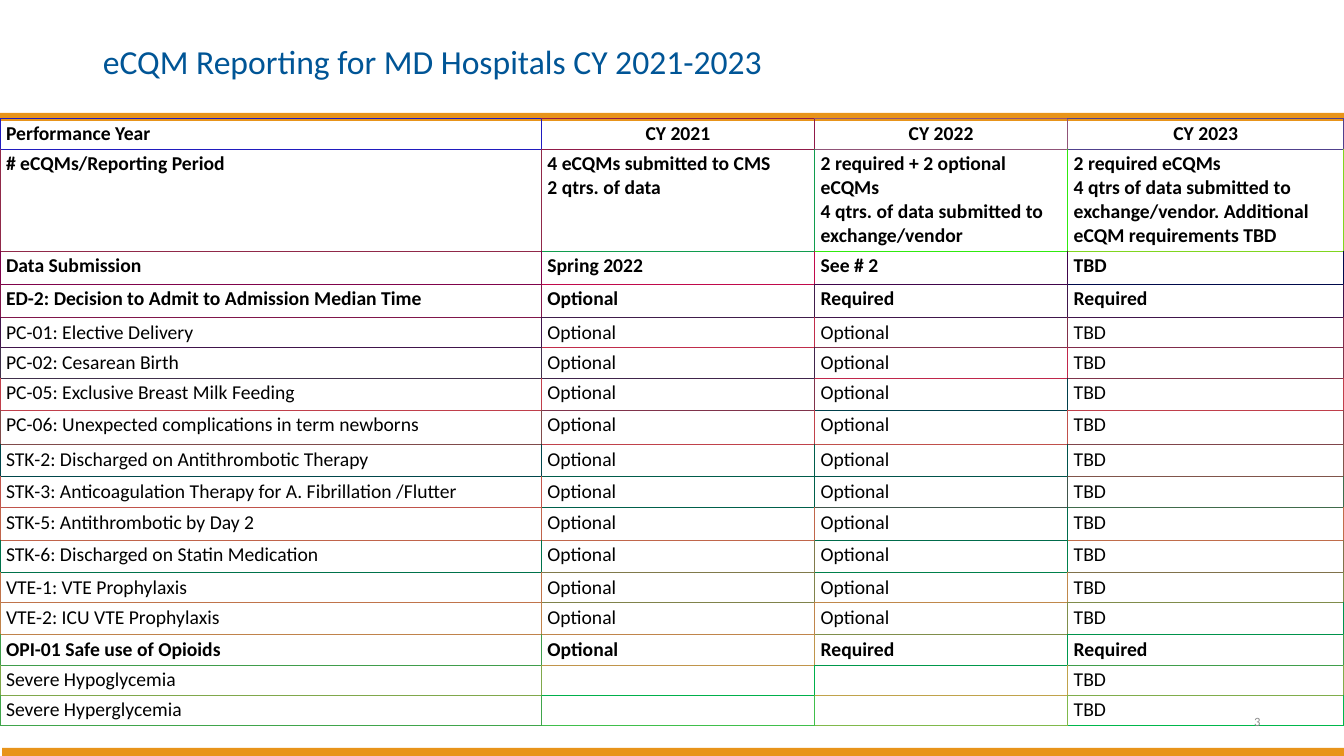
from lxml import etree
from pptx import Presentation
from pptx.dml.color import RGBColor
from pptx.enum.shapes import MSO_SHAPE
from pptx.enum.text import MSO_ANCHOR, PP_ALIGN
from pptx.oxml.ns import qn
from pptx.util import Inches, Pt

TITLE = "eCQM Reporting for MD Hospitals CY 2021-2023"
PAGE_NUMBER = "3"
OPTIONAL = ("Optional", "Optional", "TBD")
REQUIRED = ("Optional", "Required", "Required")
UNDECIDED = ("", "", "TBD")

ROWS = [
    ("Performance Year", "CY 2021", "CY 2022", "CY 2023"),
    (
        "# eCQMs/Reporting Period",
        "4 eCQMs submitted to CMS\n2 qtrs. of data",
        "2 required + 2 optional\neCQMs\n4 qtrs. of data submitted to exchange/vendor",
        "2 required eCQMs\n4 qtrs of data submitted to exchange/vendor. "
        "Additional eCQM requirements TBD",
    ),
    ("Data Submission", "Spring 2022", "See # 2", "TBD"),
    ("ED-2: Decision to Admit to Admission Median Time", *REQUIRED),
    ("PC-01: Elective Delivery", *OPTIONAL),
    ("PC-02: Cesarean Birth", *OPTIONAL),
    ("PC-05: Exclusive Breast Milk Feeding", *OPTIONAL),
    ("PC-06: Unexpected complications in term newborns", *OPTIONAL),
    ("STK-2: Discharged on Antithrombotic Therapy", *OPTIONAL),
    ("STK-3: Anticoagulation Therapy for A. Fibrillation /Flutter", *OPTIONAL),
    ("STK-5: Antithrombotic by Day 2", *OPTIONAL),
    ("STK-6: Discharged on Statin Medication", *OPTIONAL),
    ("VTE-1: VTE Prophylaxis", *OPTIONAL),
    ("VTE-2: ICU VTE Prophylaxis", *OPTIONAL),
    ("OPI-01 Safe use of Opioids", *REQUIRED),
    ("Severe Hypoglycemia", *UNDECIDED),
    ("Severe Hyperglycemia", *UNDECIDED),
]
BOLD_ROWS = {0, 1, 2, 3, 14}
COLUMN_WIDTHS = [5.37, 2.71, 2.51, 2.74]
ROW_HEIGHTS = [0.3, 1.01, 0.33, 0.33, 0.3, 0.3, 0.32, 0.34, 0.32,
               0.31, 0.32, 0.32, 0.3, 0.32, 0.3, 0.3, 0.3]
BORDER_COLORS = [
    ("201BBF", "901A49", "905478", "50418D"),
    ("902949", "109C4E", "30EA0F", "80D61F"),
    ("80034B", "C0094B", "40044B", "00094B"),
    ("80164B", "401D4B", "40164B", "40154B"),
    ("40144B", "C02D4B", "80304B", "802C4B"),
    ("40304B", "40244B", "C0274B", "80344B"),
    ("C03F4B", "80334B", "003F4B", "C03F4B"),
    ("804B4B", "C0424B", "C0504B", "80454B"),
    ("00464B", "005C4B", "00524B", "80554B"),
    ("C0544B", "00604B", "40554B", "406B4B"),
    ("C0644B", "C0664B", "006B4B", "C06D4B"),
    ("00724B", "807A4B", "00804B", "80724B"),
    ("C0744B", "80834B", "C0884B", "808C4B"),
    ("C0834B", "C0854B", "808E4B", "00924B"),
    ("409D4B", "C0954B", "00984B", "409E4B"),
    ("80A84B", "00B04B", "C0A34B", "80AD4B"),
    ("40A54B", "40BF4B", "80B94B", "00B74B"),
]

FONT = "Calibri"
WHITE = RGBColor(0xFF, 0xFF, 0xFF)
BLACK = RGBColor(0x00, 0x00, 0x00)
ORANGE = RGBColor(0xE8, 0x94, 0x1A)
BLUE = RGBColor(0x00, 0x55, 0x96)
GRAY = RGBColor(0x8C, 0x8C, 0x8C)
BANDS = [
    (0, 0, 13.33, 1.12, WHITE),
    (0.02, 7.42, 13.31, 0.08, ORANGE),
    (0, 1.12, 13.33, 0.08, ORANGE),
]


def add_text(paragraph, text, size, color, bold=False):
    """Add one formatted run to a paragraph."""
    run = paragraph.add_run()
    run.text = text
    run.font.name = FONT
    run.font.size = Pt(size)
    run.font.color.rgb = color
    run.font.bold = bold


def add_band(slide, left, top, width, height, color):
    """Draw a plain filled rectangle."""
    band = slide.shapes.add_shape(
        MSO_SHAPE.RECTANGLE, Inches(left), Inches(top), Inches(width), Inches(height))
    band.shadow.inherit = False
    band.fill.solid()
    band.fill.fore_color.rgb = color
    band.line.fill.background()


def set_borders(cell, row, column):
    """Colour the right and bottom edges, sharing the neighbours' other edges."""
    own = BORDER_COLORS[row][column]
    left = BORDER_COLORS[row][max(column - 1, 0)]
    top = BORDER_COLORS[max(row - 1, 0)][column]
    properties = cell._tc.get_or_add_tcPr()
    edges = (("a:lnL", left), ("a:lnR", own), ("a:lnT", top), ("a:lnB", own))
    for position, (tag, color) in enumerate(edges):
        line = etree.Element(qn(tag), w=str(Pt(0.75)))
        fill = etree.SubElement(line, qn("a:solidFill"))
        etree.SubElement(fill, qn("a:srgbClr"), val=color)
        properties.insert(position, line)


def fill_cell(cell, row, column):
    """Write and format one table cell."""
    cell.fill.background()
    cell.margin_left = cell.margin_right = Inches(0.06)
    cell.margin_top = cell.margin_bottom = Inches(0.03)
    set_borders(cell, row, column)
    frame = cell.text_frame
    for index, text in enumerate(ROWS[row][column].split("\n")):
        paragraph = frame.add_paragraph() if index else frame.paragraphs[0]
        if row == 0 and column:
            paragraph.alignment = PP_ALIGN.CENTER
        if text:
            add_text(paragraph, text, 14, BLACK, row in BOLD_ROWS)
        else:
            paragraph._p.get_or_add_endParaRPr().set("sz", "1400")


def add_measures_table(slide):
    """Add the table of measures by performance year."""
    table = slide.shapes.add_table(
        len(ROWS), len(COLUMN_WIDTHS), Inches(0), Inches(1.18),
        Inches(sum(COLUMN_WIDTHS)), Inches(sum(ROW_HEIGHTS))).table
    table.first_row = table.horz_banding = False
    for column, width in zip(table.columns, COLUMN_WIDTHS):
        column.width = Inches(width)
    for row, height in enumerate(ROW_HEIGHTS):
        table.rows[row].height = Inches(height)
        for column in range(len(COLUMN_WIDTHS)):
            fill_cell(table.cell(row, column), row, column)


def add_page_number(slide):
    """Add the page number at the lower right."""
    box = slide.shapes.add_textbox(Inches(9.42), Inches(6.96), Inches(3.18), Inches(0.39))
    frame = box.text_frame
    frame.word_wrap = True
    frame.vertical_anchor = MSO_ANCHOR.MIDDLE
    frame.paragraphs[0].alignment = PP_ALIGN.RIGHT
    add_text(frame.paragraphs[0], PAGE_NUMBER, 9, GRAY)


def format_title(slide):
    """Place the title in front of the header band."""
    title = slide.shapes.title
    title.left, title.top = Inches(0.92), Inches(0.21)
    title.width, title.height = Inches(11.68), Inches(0.84)
    title.text_frame.vertical_anchor = MSO_ANCHOR.MIDDLE
    paragraph = title.text_frame.paragraphs[0]
    paragraph.alignment = PP_ALIGN.LEFT
    paragraph.line_spacing = 0.9
    add_text(paragraph, TITLE, 24, BLUE)
    slide.shapes._spTree.append(title._element)


def main():
    """Build and save the slide."""
    presentation = Presentation()
    presentation.slide_width = Inches(13.33)
    presentation.slide_height = Inches(7.5)
    slide = presentation.slides.add_slide(presentation.slide_layouts[5])
    for band in BANDS:
        add_band(slide, *band)
    add_measures_table(slide)
    add_page_number(slide)
    format_title(slide)
    presentation.save("out.pptx")


if __name__ == "__main__":
    main()
